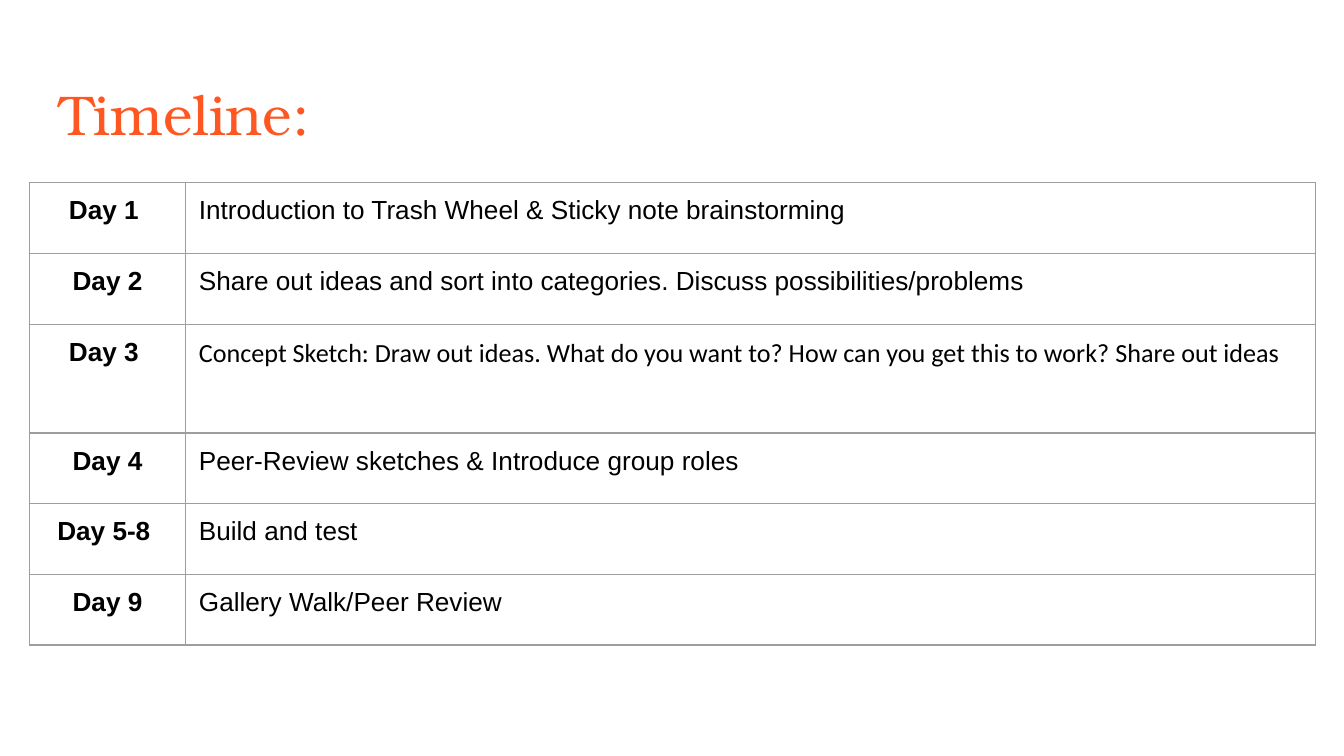
from typing import NamedTuple

from lxml.etree import SubElement
from pptx import Presentation
from pptx.dml.color import RGBColor
from pptx.enum.text import MSO_ANCHOR as Anchor, MSO_AUTO_SIZE as AutoSize, PP_ALIGN as Align
from pptx.oxml.ns import qn
from pptx.util import Inches, Pt

ORANGE, BLACK, GREY = "FF5722", "000000", "9E9E9E"
PAD = Inches(0.1)
COLUMNS = (1.16, 8.41)
TABLE_HEIGHT, TALL_ROW = 3.44, 0.81


class Entry(NamedTuple):
    day: str
    task: str
    font: str = "Arial"
    tall: bool = False


ENTRIES = [
    Entry("Day 1 ", "Introduction to Trash Wheel & Sticky note brainstorming"),
    Entry("Day 2", "Share out ideas and sort into categories. Discuss possibilities/problems"),
    Entry("Day 3 ", "Concept Sketch: Draw out ideas. What do you want to? "
          "How can you get this to work? Share out ideas", "Calibri", tall=True),
    Entry("Day 4", "Peer-Review sketches & Introduce group roles"),
    Entry("Day 5-8 ", "Build and test"),
    Entry("Day 9", "Gallery Walk/Peer Review"),
]


def rgb(color: str) -> RGBColor:
    return RGBColor.from_string(color)


def write(tf, text: str, *, size=14, font="Arial", color=BLACK, bold=False,
          align=Align.LEFT) -> None:
    p = tf.paragraphs[0]
    p.alignment = align
    r = p.add_run()
    r.text = text
    r.font.size, r.font.name, r.font.bold = Pt(size), font, bold
    r.font.color.rgb = rgb(color)


def set_padding(box) -> None:
    box.margin_left = box.margin_right = box.margin_top = box.margin_bottom = PAD
    box.vertical_anchor = Anchor.TOP


def style_cell(cell) -> None:
    set_padding(cell)
    tc_pr = cell._tc.get_or_add_tcPr()
    for side in ("a:lnL", "a:lnR", "a:lnT", "a:lnB"):
        ln = SubElement(tc_pr, qn(side), w=str(Pt(0.75)))
        fill = SubElement(ln, qn("a:solidFill"))
        SubElement(fill, qn("a:srgbClr"), val=GREY)
    cell.fill.background()


def add_timeline(slide, entries: list[Entry]) -> None:
    table = slide.shapes.add_table(len(entries), len(COLUMNS), Inches(0.22), Inches(1.36),
                                   Inches(sum(COLUMNS)), Inches(TABLE_HEIGHT)).table
    table.first_row = table.horz_banding = False
    for column, width in zip(table.columns, COLUMNS):
        column.width = Inches(width)
    # The plain rows share what the tall ones leave
    tall_count = sum(e.tall for e in entries)
    plain_row = (TABLE_HEIGHT - tall_count * TALL_ROW) / (len(entries) - tall_count)
    for i, entry in enumerate(entries):
        table.rows[i].height = Inches(TALL_ROW if entry.tall else plain_row)
        day, task = table.cell(i, 0), table.cell(i, 1)
        style_cell(day)
        style_cell(task)
        write(day.text_frame, entry.day, bold=True, align=Align.CENTER)
        write(task.text_frame, entry.task, font=entry.font)


# Slide, 16:9
prs = Presentation()
prs.slide_width = Inches(10)
prs.slide_height = prs.slide_width * 9 // 16
slide = prs.slides.add_slide(prs.slide_layouts[5])

# Title
title = slide.shapes.title
title.left, title.top = Inches(0.34), Inches(0.49)
title.width, title.height = Inches(9.32), Inches(0.63)
tf = title.text_frame
set_padding(tf)
tf.word_wrap, tf.auto_size = True, AutoSize.NONE
write(tf, "Timeline:", size=30, font="TeX Gyre Bonum", color=ORANGE)

# Day-by-day table
add_timeline(slide, ENTRIES)

prs.save("out.pptx")
